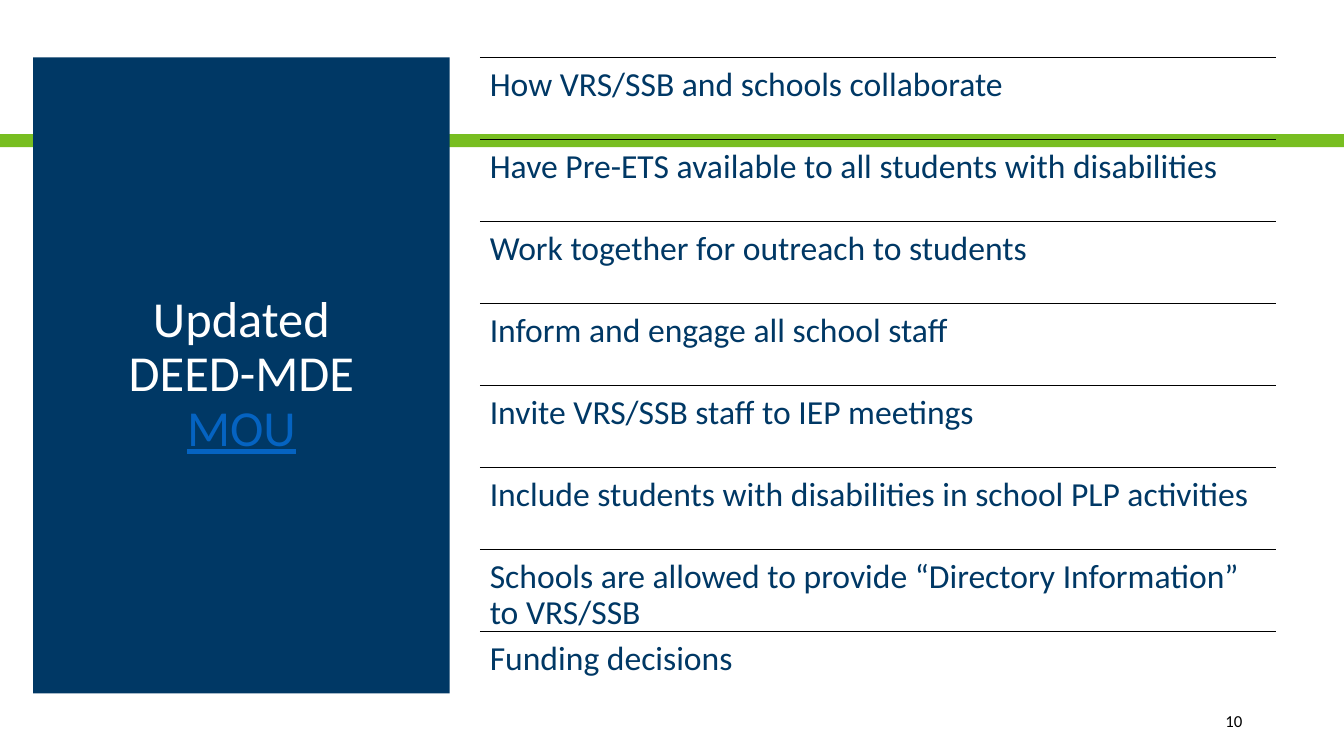
"""Build the slide on the updated DEED-MDE agreement."""
from lxml.etree import SubElement
from pptx import Presentation
from pptx.dml.color import RGBColor
from pptx.enum.shapes import MSO_CONNECTOR, MSO_SHAPE
from pptx.enum.text import MSO_ANCHOR, PP_ALIGN
from pptx.oxml.ns import qn
from pptx.util import Inches, Pt

NAVY = RGBColor(0x00, 0x38, 0x65)
GREEN = RGBColor(0x78, 0xBE, 0x21)
BLUE = RGBColor(0x05, 0x63, 0xC1)
WHITE = RGBColor(0xFF, 0xFF, 0xFF)
BLACK = RGBColor(0x00, 0x00, 0x00)

LEFT, TOP, WIDTH, STEP = 4.76, 0.57, 7.9, 0.813
TOPICS = [
    "How VRS/SSB and schools collaborate",
    "Have Pre-ETS available to all students with disabilities",
    "Work together for outreach to students",
    "Inform and engage all school staff",
    "Invite VRS/SSB staff to IEP meetings",
    "Include students with disabilities in school PLP activities",
    "Schools are allowed to provide “Directory Information” to VRS/SSB",
    "Funding decisions",
]

deck = Presentation()
deck.slide_width, deck.slide_height = Inches(13.33), Inches(7.5)
slide = deck.slides.add_slide(deck.slide_layouts[6])


def add_box(box, color):
    shape = slide.shapes.add_shape(MSO_SHAPE.RECTANGLE, *map(Inches, box))
    shape.shadow.inherit = False
    shape.fill.solid()
    shape.fill.fore_color.rgb = color
    shape.line.fill.background()
    return shape


def add_text(frame, runs, size, align, anchor, inset, space=1.0):
    side, edge = map(Inches, inset)
    style = {"word_wrap": True, "vertical_anchor": anchor,
             "margin_left": side, "margin_right": side,
             "margin_top": edge, "margin_bottom": edge}
    for name, value in style.items():
        setattr(frame, name, value)
    para = frame.paragraphs[0]
    para.alignment, para.line_spacing = align, space
    for text, color in runs:
        run = para.add_run()
        run.text = text
        run.font.name, run.font.size = "Calibri", Pt(size)
        run.font.color.rgb = color
    return para


add_box((0, 1.33, 13.33, 0.13), GREEN)
panel = add_box((0.33, 0.57, 4.13, 6.31), NAVY)
title = add_text(panel.text_frame, [("Updated DEED-MDE ", WHITE), ("MOU", BLUE)],
                 36, PP_ALIGN.CENTER, MSO_ANCHOR.MIDDLE, (0.9, 0.05), 0.9)
title.runs[1].font.underline = True

for index, topic in enumerate(TOPICS):
    top = TOP + index * STEP
    rule = slide.shapes.add_connector(
        MSO_CONNECTOR.STRAIGHT, Inches(LEFT), Inches(top),
        Inches(LEFT + WIDTH), Inches(top))
    rule.line.color.rgb, rule.line.width = BLACK, Pt(0.75)
    SubElement(rule.element.spPr, qn("a:effectLst"))
    label = slide.shapes.add_textbox(*map(Inches, (LEFT, top, WIDTH, STEP)))
    add_text(label.text_frame, [(topic, NAVY)], 24, PP_ALIGN.LEFT,
             MSO_ANCHOR.TOP, (0.1, 0.1), 0.9)

number = slide.shapes.add_textbox(*map(Inches, (10.82, 6.95, 1.6, 0.4)))
add_text(number.text_frame, [("10", BLACK)], 12, PP_ALIGN.RIGHT,
         MSO_ANCHOR.MIDDLE, (0.1, 0.05))

deck.save("out.pptx")
